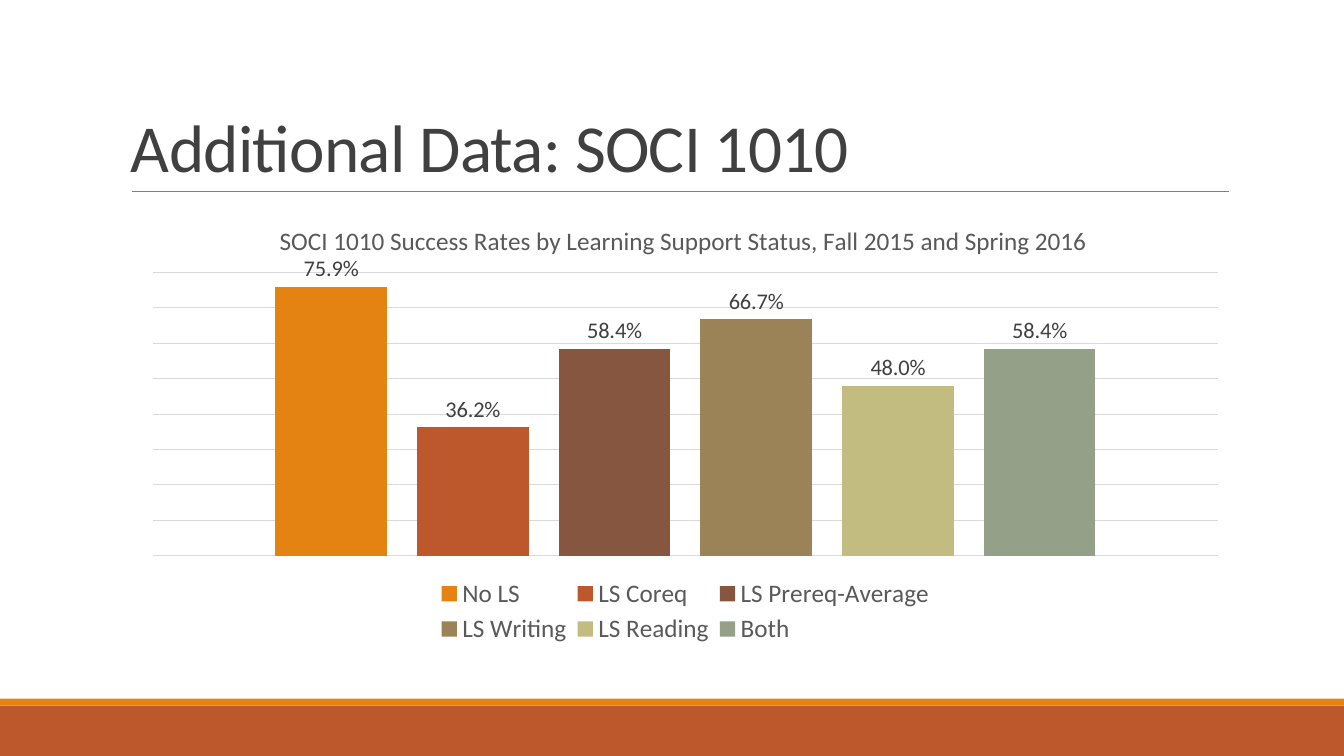
from lxml import etree
from pptx import Presentation
from pptx.chart import data
from pptx.dml.color import RGBColor
from pptx.enum import chart as ch, shapes, text
from pptx.oxml import ns
from pptx.util import Pt

COLORS = {
    "band": "BD582C", "stripe": "E48312", "rule": "808080",
    "dark": "404040", "grey": "595959", "grid": "D9D9D9",
}
FONT = "Calibri"
RATES = [  # learning support status, success rate, colour
    ("No LS", 0.759, "E48312"),
    ("LS Coreq", 0.362, "BD582C"),
    ("LS Prereq-Average", 0.584, "865640"),
    ("LS Writing", 0.667, "9B8357"),
    ("LS Reading", 0.48, "C2BC80"),
    ("Both", 0.584, "94A088"),
]


def rgb(hex_color):
    return RGBColor.from_string(hex_color)


def set_font(font, size, color):
    font.name, font.size, font.bold = FONT, Pt(size), False
    font.color.rgb = rgb(color)


def set_layout(element, after, **fractions):
    """Place a chart part by fractions of the chart, behind the child named after."""
    for old in element.findall(ns.qn("c:layout")):
        element.remove(old)
    layout = etree.Element(ns.qn("c:layout"))
    manual = etree.SubElement(layout, ns.qn("c:manualLayout"))
    if after is None:
        etree.SubElement(manual, ns.qn("c:layoutTarget")).set("val", "inner")
    for mode in ("xMode", "yMode"):
        etree.SubElement(manual, ns.qn(f"c:{mode}")).set("val", "edge")
    for key, value in fractions.items():
        etree.SubElement(manual, ns.qn(f"c:{key}")).set("val", str(value))
    if after is None:
        element.insert(0, layout)
    else:
        element.find(ns.qn(after)).addnext(layout)


def add_footer(slide, left, top, width, height):
    stripe_height = 5
    bars = [("band", top + stripe_height, height - stripe_height),
            ("stripe", top, stripe_height)]
    for color, bar_top, bar_height in bars:
        bar = slide.shapes.add_shape(shapes.MSO_SHAPE.RECTANGLE, Pt(left), Pt(bar_top),
                                     Pt(width), Pt(bar_height))
        bar.shadow.inherit = False
        bar.fill.solid()
        bar.fill.fore_color.rgb = rgb(COLORS[color])
        bar.line.fill.background()


def add_heading(slide, left, top, width, height):
    # Rule below the heading
    bottom = top + height
    rule = slide.shapes.add_connector(shapes.MSO_CONNECTOR.STRAIGHT, Pt(left + 7.9),
                                      Pt(bottom), Pt(left + width - 0.7), Pt(bottom))
    rule.line.color.rgb = rgb(COLORS["rule"])
    rule.line.width = Pt(0.5)
    etree.SubElement(rule._element.spPr, ns.qn("a:effectLst"))

    # Heading text
    heading = slide.shapes.add_textbox(Pt(left), Pt(top), Pt(width), Pt(height))
    frame = heading.text_frame
    frame.word_wrap = True
    frame.vertical_anchor = text.MSO_ANCHOR.BOTTOM
    frame.text = "Additional Data: SOCI 1010"
    line = frame.paragraphs[0]
    line.line_spacing = 0.85
    set_font(line.runs[0].font, 48, COLORS["dark"])
    line.runs[0].font._element.set("spc", "-50")


def add_rates_chart(slide, left, top, width, height):
    rates = data.CategoryChartData(number_format="0.0%")
    rates.categories = ["1"]
    for status, rate, _ in RATES:
        rates.add_series(status, [rate])
    chart = slide.shapes.add_chart(ch.XL_CHART_TYPE.COLUMN_CLUSTERED, Pt(left), Pt(top),
                                   Pt(width), Pt(height), rates).chart
    set_font(chart.font, 10, "000000")

    # Chart title
    title = chart.chart_title
    title.text_frame.text = ("SOCI 1010 Success Rates by Learning Support Status, "
                             "Fall 2015 and Spring 2016")
    set_font(title.text_frame.paragraphs[0].runs[0].font, 18, COLORS["grey"])
    set_layout(title._element, "c:tx", x=0.13, y=0.03)

    # Columns and their labels
    plot = chart.plots[0]
    plot.gap_width, plot.overlap = 219, -27
    plot.vary_by_categories = False
    for series, (_, _, color) in zip(plot.series, RATES):
        series.format.fill.solid()
        series.format.fill.fore_color.rgb = rgb(color)
        labels = series.data_labels
        labels.show_value = True
        labels.position = ch.XL_LABEL_POSITION.OUTSIDE_END
        labels.number_format, labels.number_format_is_linked = "0.0%", False
        set_font(labels.font, 16, COLORS["dark"])
    set_layout(chart._chartSpace.chart.plotArea, None, x=0.02, y=0.15, w=0.96, h=0.64)

    # Hidden axes with gridlines
    chart.category_axis.visible = False
    axis = chart.value_axis
    axis.visible = False
    axis.minimum_scale, axis.maximum_scale, axis.major_unit = 0, 0.8, 0.1
    axis.tick_labels.number_format = "0.0%"
    axis.tick_labels.number_format_is_linked = False
    axis.has_major_gridlines = True
    axis.major_gridlines.format.line.color.rgb = rgb(COLORS["grid"])
    axis.major_gridlines.format.line.width = Pt(0.75)

    # Legend in two rows
    chart.has_legend = True
    chart.legend.position = ch.XL_LEGEND_POSITION.BOTTOM
    chart.legend.include_in_layout = False
    set_font(chart.legend.font, 18, COLORS["grey"])
    set_layout(chart.legend._element, "c:legendPos", x=0.27, y=0.83, w=0.46, h=0.17)


def main():
    deck = Presentation()
    deck.slide_width, deck.slide_height = Pt(960), Pt(540)
    slide = deck.slides.add_slide(deck.slide_layouts[6])
    add_footer(slide, 0, 499, 960, 41)
    add_heading(slide, 86.4, 22.5, 792, 114.2)
    add_rates_chart(slide, 93.6, 146.9, 792, 316.8)
    deck.save("out.pptx")


if __name__ == "__main__":
    main()
